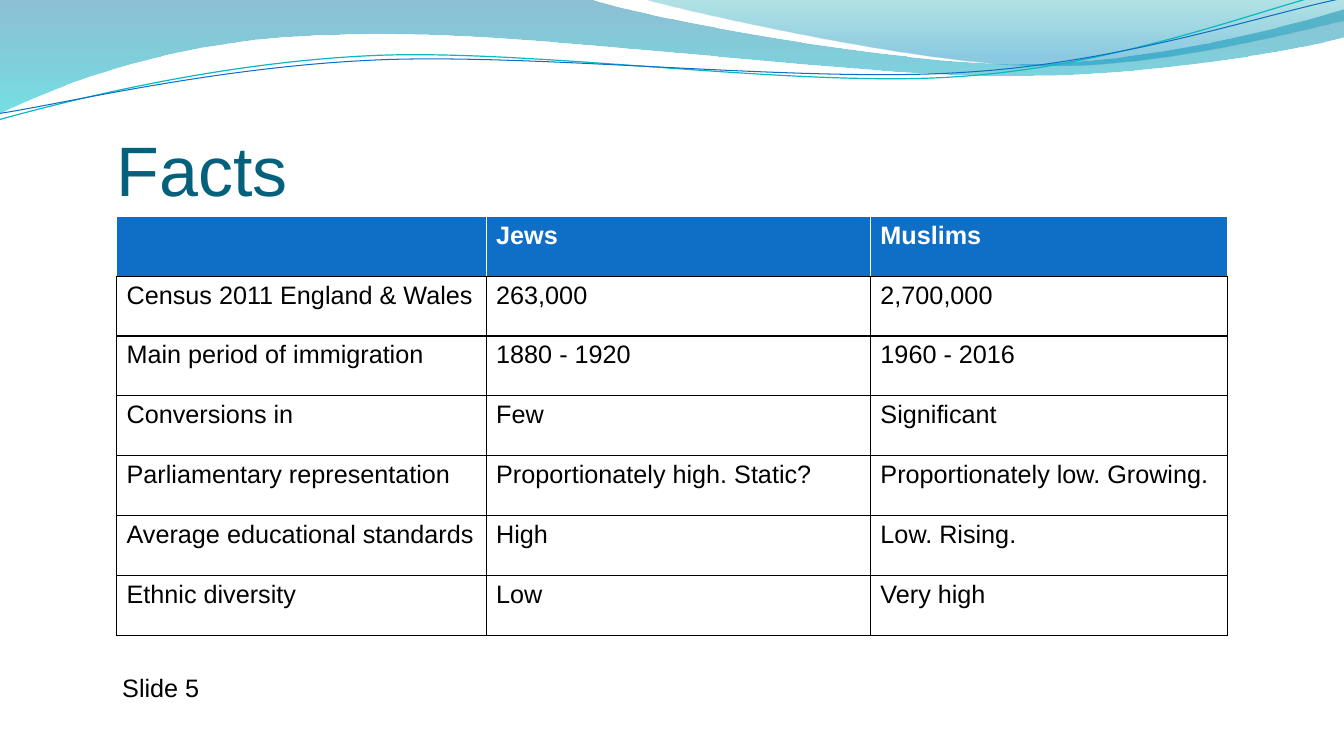
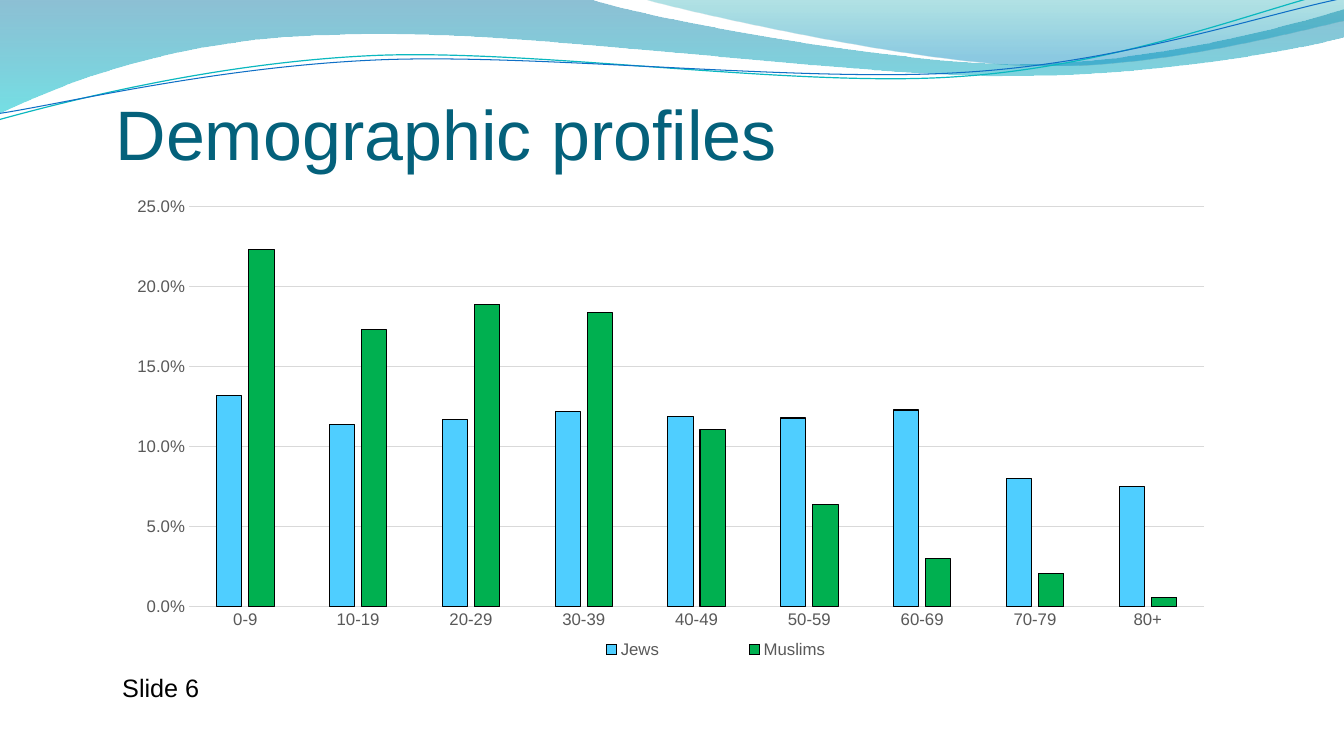
from dataclasses import dataclass

from lxml.etree import SubElement
from pptx import Presentation
from pptx.chart.data import CategoryChartData
from pptx.dml.color import RGBColor as RGB
from pptx.enum.chart import XL_CHART_TYPE as ChartType
from pptx.enum.chart import XL_LEGEND_POSITION as LegendPos
from pptx.enum.chart import XL_TICK_MARK as Tick
from pptx.enum.text import MSO_ANCHOR as Anchor
from pptx.oxml import parse_xml
from pptx.oxml.ns import nsdecls, qn
from pptx.util import Pt

PX = 9525  # EMU per px, 96 px to the inch


@dataclass(frozen=True)
class Theme:
    font: str = "Arial"
    title_size: int = 50
    body_size: int = 18
    chart_size: int = 12
    title: str = "04617B"
    text: str = "000000"
    white: str = "FFFFFF"
    header: str = "0F6FC6"
    teal: str = "0AB8BF"
    axis_text: str = "595959"
    grid: str = "D9D9D9"
    jews: str = "4FCEFF"
    muslims: str = "00B050"


T = Theme()


def add_text(slide, box, text, size, color):
    tf = slide.shapes.add_textbox(*(v * PX for v in box)).text_frame
    tf.word_wrap = True
    p = tf.paragraphs[0]
    p.text = text
    p.font.name, p.font.size = T.font, Pt(size)
    p.font.color.rgb = RGB.from_string(color)
    return tf


def chart_layout(box, chart_size, target=""):
    """Build the manual layout that puts a chart part at box (px inside the chart)."""
    modes = '<c:xMode val="edge"/><c:yMode val="edge"/>'
    sizes = "".join(f'<c:{name} val="{v / chart_size[i % 2]:.5f}"/>'
                    for i, (name, v) in enumerate(zip("xywh", box)))
    return parse_xml(f'<c:layout {nsdecls("c")}><c:manualLayout>{target}{modes}{sizes}'
                     '</c:manualLayout></c:layout>')


prs = Presentation()
prs.slide_width, prs.slide_height = 1280 * PX, 720 * PX
blank = prs.slide_layouts[6]
for ph in list(blank.placeholders):
    ph.element.getparent().remove(ph.element)

# Titles and footers
slides = []
for number, title, box in [
    (5, "Facts", (111, 80, 1058, 120)),
    (6, "Demographic profiles", (110, 81, 1058, 85)),
]:
    slide = prs.slides.add_slide(blank)
    slides.append(slide)
    tf = add_text(slide, box, title, T.title_size, T.title)
    tf.vertical_anchor = Anchor.BOTTOM
    tf.margin_left = tf.margin_right = tf.margin_bottom = 0
    add_text(slide, (107, 636, 113, 38), f"Slide {number}", T.body_size, T.text)
facts, profiles = slides

# Waves, drawn once and kept on the shared layout.
# Two numbers are a corner, six a cubic curve. A band has gradient stops
# (position, colour, opacity %), a strand has a line colour and width.
waves = [
    ([(0, 0), (564, 0), (609, 16, 850, 61, 971, 61), (1092, 61, 1227, 25, 1280, 9),
      (1282, 35), (1259, 42, 1114, 73, 954, 72), (796, 72, 489, 27, 329, 33),
      (165, 35, 59, 80, -1, 108)],
     [(0, "0074A1", 45), (1, "00C6CF", 55)], None),
    ([(614, 0), (652, 11, 873, 60, 984, 62), (1095, 66, 1231, 31, 1280, 20), (1280, 0)],
     [(0, "00A1A9", 30), (0.8, "008BBF", 45)], None),
    ([(-1, 114), (61, 97, 203, 60, 354, 53), (506, 46, 758, 84, 912, 73),
      (1066, 63, 1202, 8, 1278, -10)], None, (T.teal, 0.85)),
    ([(0, 108), (60, 99, 209, 63, 363, 57), (516, 51, 764, 79, 917, 69),
      (1070, 60, 1205, 13, 1281, -2)], None, (T.header, 0.75)),
]
shapes = []
for (start, *steps), stops, line in waves:
    builder = facts.shapes.build_freeform(*start, scale=PX)
    builder.add_line_segments(
        [step[i:i + 2] for step in steps for i in range(0, len(step), 2)], close=bool(stops))
    sp = builder.convert_to_shape()
    segments = iter(list(sp.element.iter(qn("a:lnTo"))))
    for step in steps:
        segment = next(segments)
        if len(step) == 6:
            for extra in (next(segments), next(segments)):
                segment.append(extra[0])
                extra.getparent().remove(extra)
            segment.tag = qn("a:cubicBezTo")
    if stops:
        sp.line.fill.background()
        sp.fill.gradient()
        sp.fill.gradient_angle = 270
        for stop, (position, color, _) in zip(sp.fill.gradient_stops, stops):
            stop.position = position
            stop.color.rgb = RGB.from_string(color)
        for clr, (_, _, opacity) in zip(sp.element.iter(qn("a:srgbClr")), stops):
            SubElement(clr, qn("a:alpha"), val=str(opacity * 1000))
    else:
        color, width = line
        sp.fill.background()
        sp.line.color.rgb = RGB.from_string(color)
        sp.line.width = Pt(width)
    sp.shadow.inherit = False
    shapes.append(sp)
for sp in shapes:
    blank.shapes.element.append(sp.element)

# Facts table
rows = [
    ("", "Jews", "Muslims"),
    ("Census 2011 England & Wales", "263,000", "2,700,000"),
    ("Main period of immigration", "1880 - 1920", "1960 - 2016"),
    ("Conversions in", "Few", "Significant"),
    ("Parliamentary representation", "Proportionately high. Static?", "Proportionately low. Growing."),
    ("Average educational standards", "High", "Low. Rising."),
    ("Ethnic diversity", "Low", "Very high"),
]
widths, row_height = (352, 366, 340), 57
table = facts.shapes.add_table(
    len(rows), len(widths), 111 * PX, 206 * PX,
    sum(widths) * PX, len(rows) * row_height * PX).table
table.horz_banding = False
for column, width in zip(table.columns, widths):
    column.width = width * PX
for i, texts in enumerate(rows):
    is_header = i == 0
    for j, text in enumerate(texts):
        cell = table.cell(i, j)
        p = cell.text_frame.paragraphs[0]
        p.text = text
        p.font.name, p.font.size, p.font.bold = T.font, Pt(T.body_size), is_header
        p.font.color.rgb = RGB.from_string(T.white if is_header else T.text)
        if is_header:
            cell.fill.solid()
            cell.fill.fore_color.rgb = RGB.from_string(T.header)
        else:
            cell.fill.background()
        tc_pr = cell._tc.get_or_add_tcPr()
        for k, side in enumerate("LRTB"):
            color = T.white if is_header and side != "B" else T.text
            tc_pr.insert(k, parse_xml(
                f'<a:ln{side} {nsdecls("a")} w="{Pt(1)}"><a:solidFill>'
                f'<a:srgbClr val="{color}"/></a:solidFill></a:ln{side}>'))

# Age chart
data = CategoryChartData(number_format="0.0%")
data.categories = ["0-9", "10-19", "20-29", "30-39", "40-49", "50-59", "60-69", "70-79", "80+"]
data.add_series("Jews", (0.132, 0.114, 0.117, 0.122, 0.119, 0.118, 0.123, 0.08, 0.075))
data.add_series("Muslims", (0.223, 0.173, 0.189, 0.184, 0.111, 0.064, 0.03, 0.021, 0.006))
chart_size = (1058, 461)
chart = profiles.shapes.add_chart(
    ChartType.COLUMN_CLUSTERED, 110 * PX, 179 * PX, *(v * PX for v in chart_size), data).chart
chart.has_title = False
chart.font.name, chart.font.size = T.font, Pt(T.chart_size)
chart.font.color.rgb = RGB.from_string(T.axis_text)
chart.has_legend = True
legend = chart.legend
legend.position = LegendPos.BOTTOM
legend.include_in_layout = False

plot_area = next(chart.element.iter(qn("c:plotArea")))
for part in (plot_area, legend.element if hasattr(legend, "element") else legend._element):
    for old in part.findall(qn("c:layout")):
        part.remove(old)
    if part is plot_area:
        part.insert(0, chart_layout((70, 18, 967, 381), chart_size,
                                    '<c:layoutTarget val="inner"/>'))
    else:
        part.find(qn("c:legendPos")).addnext(chart_layout((387, 429, 370, 22), chart_size))

plot = chart.plots[0]
plot.gap_width, plot.overlap, plot.vary_by_categories = 219, -27, False
for series, color in zip(plot.series, (T.jews, T.muslims)):
    series.format.fill.solid()
    series.format.fill.fore_color.rgb = RGB.from_string(color)
    series.format.line.color.rgb = RGB.from_string(T.text)
    series.format.line.width = Pt(0.75)

ages, shares = chart.category_axis, chart.value_axis
for axis in (ages, shares):
    axis.major_tick_mark = axis.minor_tick_mark = Tick.NONE
shares.minimum_scale, shares.maximum_scale, shares.major_unit = 0, 0.25, 0.05
shares.tick_labels.number_format = "0.0%"
shares.tick_labels.number_format_is_linked = False
shares.format.line.fill.background()
for line in (ages.format.line, shares.major_gridlines.format.line):
    line.color.rgb = RGB.from_string(T.grid)
    line.width = Pt(0.75)

prs.save("out.pptx")
